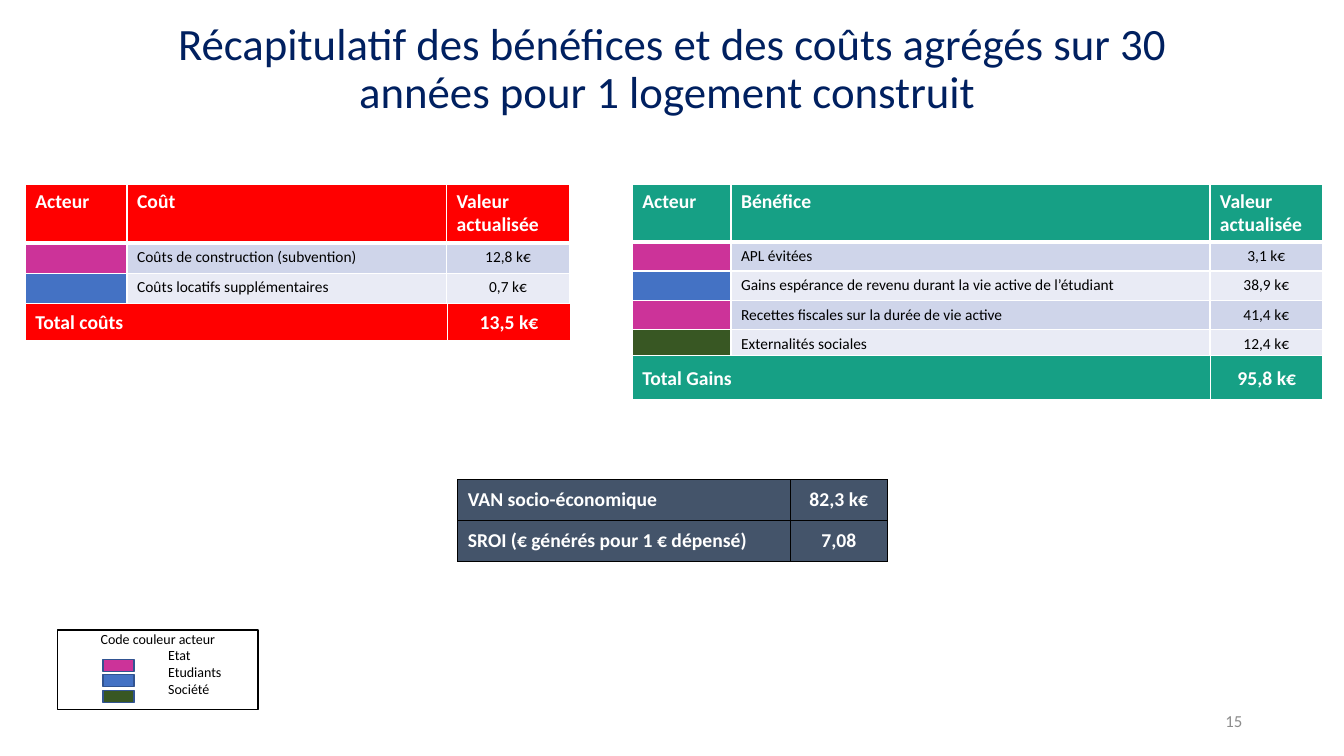
from dataclasses import dataclass
from typing import Any

from lxml.etree import SubElement
from pptx import Presentation
from pptx.dml.color import RGBColor
from pptx.enum.shapes import MSO_SHAPE
from pptx.enum.text import MSO_ANCHOR, PP_ALIGN
from pptx.oxml import parse_xml
from pptx.oxml.ns import nsdecls, qn
from pptx.util import Inches, Pt

COLORS = {
    "navy": "002060", "grey": "8C8C8C", "black": "000000", "white": "FFFFFF",
    "red": "FF0000", "green": "16A085", "slate": "44546A", "outline": "325491",
    "state": "CC3399", "students": "4472C4", "society": "385723",
    "band_dark": "CFD5EA", "band_light": "E9EBF5",
}
BOLD = {"name": "Calibri", "size": Pt(14), "bold": True}
BODY = {"name": "Calibri", "size": Pt(11), "bold": False}
LEGEND = {"name": "Calibri", "size": Pt(10)}


@dataclass
class Frame:
    left: float
    top: float
    width: float
    height: float

    def lengths(self) -> list[Any]:
        return [Inches(n) for n in (self.left, self.top, self.width, self.height)]


@dataclass
class Detail:
    frame: Frame
    columns: list[float]
    header_height: float
    row_height: float
    color: str
    header: str
    rows: list[tuple[str, str, str]]


@dataclass
class Summary:
    frame: Frame
    columns: list[float]
    color: str
    border: str
    bottom: float
    rows: list[tuple[str, str]]


@dataclass
class Swatch:
    actor: str
    label: str
    top: float


DETAILS = [
    Detail(Frame(0.25, 1.83, 5.4, 1.18), [1.01, 3.17, 1.22], 0.58, 0.3, "red", "Coût", [
        ("state", "Coûts de construction (subvention)", "12,8 k€"),
        ("students", "Coûts locatifs supplémentaires", "0,7 k€"),
    ]),
    Detail(Frame(6.27, 1.83, 6.85, 1.73), [0.98, 4.75, 1.12], 0.57, 0.29, "green", "Bénéfice", [
        ("state", "APL évitées", "3,1 k€"),
        ("students", "Gains espérance de revenu durant la vie active de l’étudiant", "38,9 k€"),
        ("state", "Recettes fiscales sur la durée de vie active", "41,4 k€"),
        ("society", "Externalités sociales", "12,4 k€"),
    ]),
]
SUMMARIES = [
    Summary(Frame(6.27, 3.53, 6.85, 0.45), [5.74, 1.11], "green", "white", 3,
            [("Total Gains", "95,8 k€")]),
    Summary(Frame(0.25, 3.01, 5.41, 0.38), [4.19, 1.22], "red", "white", 3,
            [("Total coûts", "13,5 k€")]),
    Summary(Frame(4.54, 4.76, 4.26, 0.81), [3.3, 0.96], "slate", "black", 1,
            [("VAN socio-économique", "82,3 k€"),
             ("SROI (€ générés pour 1 € dépensé)", "7,08")]),
]
SWATCHES = [
    Swatch("state", "Etat", 6.54),
    Swatch("students", "Etudiants", 6.69),
    Swatch("society", "Société", 6.85),
]


def rgb(name: str) -> RGBColor:
    return RGBColor.from_string(COLORS[name])


def write(paragraph: Any, text: str, style: dict[str, Any], color: str,
          align: Any = PP_ALIGN.LEFT) -> None:
    paragraph.alignment = align
    if not text:
        size = int(style["size"].pt * 100)
        SubElement(paragraph._p, qn("a:endParaRPr"), sz=str(size))
        return
    span = paragraph.add_run()
    span.text = text
    for key, value in style.items():
        setattr(span.font, key, value)
    span.font.color.rgb = rgb(color)


def add_label(page: Any, frame: Frame, text: str, style: dict[str, Any],
              color: str, align: Any) -> Any:
    box = page.shapes.add_textbox(*frame.lengths())
    box.text_frame.word_wrap = True
    box.text_frame.vertical_anchor = MSO_ANCHOR.MIDDLE
    paragraph = box.text_frame.paragraphs[0]
    write(paragraph, text, style, color, align)
    return paragraph


def add_grid(page: Any, frame: Frame, columns: list[float], heights: list[float]) -> Any:
    table = page.shapes.add_table(len(heights), len(columns), *frame.lengths()).table
    table.first_row = False
    table.horz_banding = False
    for column, width in zip(table.columns, columns):
        column.width = Inches(width)
    for row, height in zip(table.rows, heights):
        row.height = Inches(height)
    return table


def fill_cell(cell: Any, text: str, style: dict[str, Any], color: str, fill: str,
              border: str, top: float, bottom: float, align: Any = PP_ALIGN.LEFT) -> None:
    write(cell.text_frame.paragraphs[0], text, style, color, align)
    properties = cell._tc.get_or_add_tcPr()
    for side, width in {"L": 1, "R": 1, "T": top, "B": bottom}.items():
        properties.append(parse_xml(
            f'<a:ln{side} {nsdecls("a")} w="{Pt(width)}"><a:solidFill>'
            f'<a:srgbClr val="{COLORS[border]}"/></a:solidFill></a:ln{side}>'))
    cell.fill.solid()
    cell.fill.fore_color.rgb = rgb(fill)


def add_detail(page: Any, detail: Detail) -> None:
    heights = [detail.header_height] + [detail.row_height] * len(detail.rows)
    table = add_grid(page, detail.frame, detail.columns, heights)
    for column, text in enumerate(("Acteur", detail.header, "Valeur actualisée")):
        fill_cell(table.cell(0, column), text, BOLD, "white", detail.color, "white", 1, 3)
    for row, (actor, label, value) in enumerate(detail.rows, 1):
        band = "band_dark" if row % 2 else "band_light"
        top = 3 if row == 1 else 1
        cells = (("", actor, PP_ALIGN.LEFT), (label, band, PP_ALIGN.LEFT),
                 (value, band, PP_ALIGN.CENTER))
        for column, (text, fill, align) in enumerate(cells):
            fill_cell(table.cell(row, column), text, BODY, "black", fill, "white", top, 1, align)


def add_summary(page: Any, summary: Summary) -> None:
    count = len(summary.rows)
    table = add_grid(page, summary.frame, summary.columns, [summary.frame.height / count] * count)
    for row, texts in enumerate(summary.rows):
        for column, (text, align) in enumerate(zip(texts, (PP_ALIGN.LEFT, PP_ALIGN.CENTER))):
            cell = table.cell(row, column)
            cell.vertical_anchor = MSO_ANCHOR.MIDDLE
            fill_cell(cell, text, BOLD, "white", summary.color, summary.border, 1,
                      summary.bottom, align)


def add_box(page: Any, frame: Frame, line: str, fill: str | None = None) -> Any:
    box = page.shapes.add_shape(MSO_SHAPE.RECTANGLE, *frame.lengths())
    box.shadow.inherit = False
    box.line.color.rgb = rgb(line)
    box.line.width = Pt(1)
    if fill:
        box.fill.solid()
        box.fill.fore_color.rgb = rgb(fill)
    else:
        box.fill.background()
    return box


def add_legend(page: Any) -> None:
    text = add_box(page, Frame(0.57, 6.25, 1.99, 0.79), "black").text_frame
    text.word_wrap = True
    text.vertical_anchor = MSO_ANCHOR.TOP
    text.margin_top = text.margin_bottom = 0
    write(text.paragraphs[0], "Code couleur acteur", LEGEND, "black", PP_ALIGN.CENTER)
    for swatch in SWATCHES:
        paragraph = text.add_paragraph()
        tabs = SubElement(paragraph._p.get_or_add_pPr(), qn("a:tabLst"))
        SubElement(tabs, qn("a:tab"), pos=str(Inches(1)), algn="l")
        write(paragraph, f"\t{swatch.label}", LEGEND, "black")
        add_box(page, Frame(1.02, swatch.top, 0.31, 0.12), "outline", swatch.actor)


def main() -> None:
    deck = Presentation()
    deck.slide_width, deck.slide_height = Inches(13.33), Inches(7.5)
    page = deck.slides.add_slide(deck.slide_layouts[6])
    title = add_label(page, Frame(1.19, 0.26, 10.96, 0.87),
                      "Récapitulatif des bénéfices et des coûts agrégés sur 30 années "
                      "pour 1 logement construit ",
                      {"name": "Calibri", "size": Pt(32)}, "navy", PP_ALIGN.CENTER)
    title.line_spacing = 0.9
    add_label(page, Frame(9.42, 6.95, 3, 0.4), "15",
              {"name": "Calibri", "size": Pt(12)}, "grey", PP_ALIGN.RIGHT)
    add_legend(page)
    for detail in DETAILS:
        add_detail(page, detail)
    for summary in SUMMARIES:
        add_summary(page, summary)
    deck.save("out.pptx")


if __name__ == "__main__":
    main()
